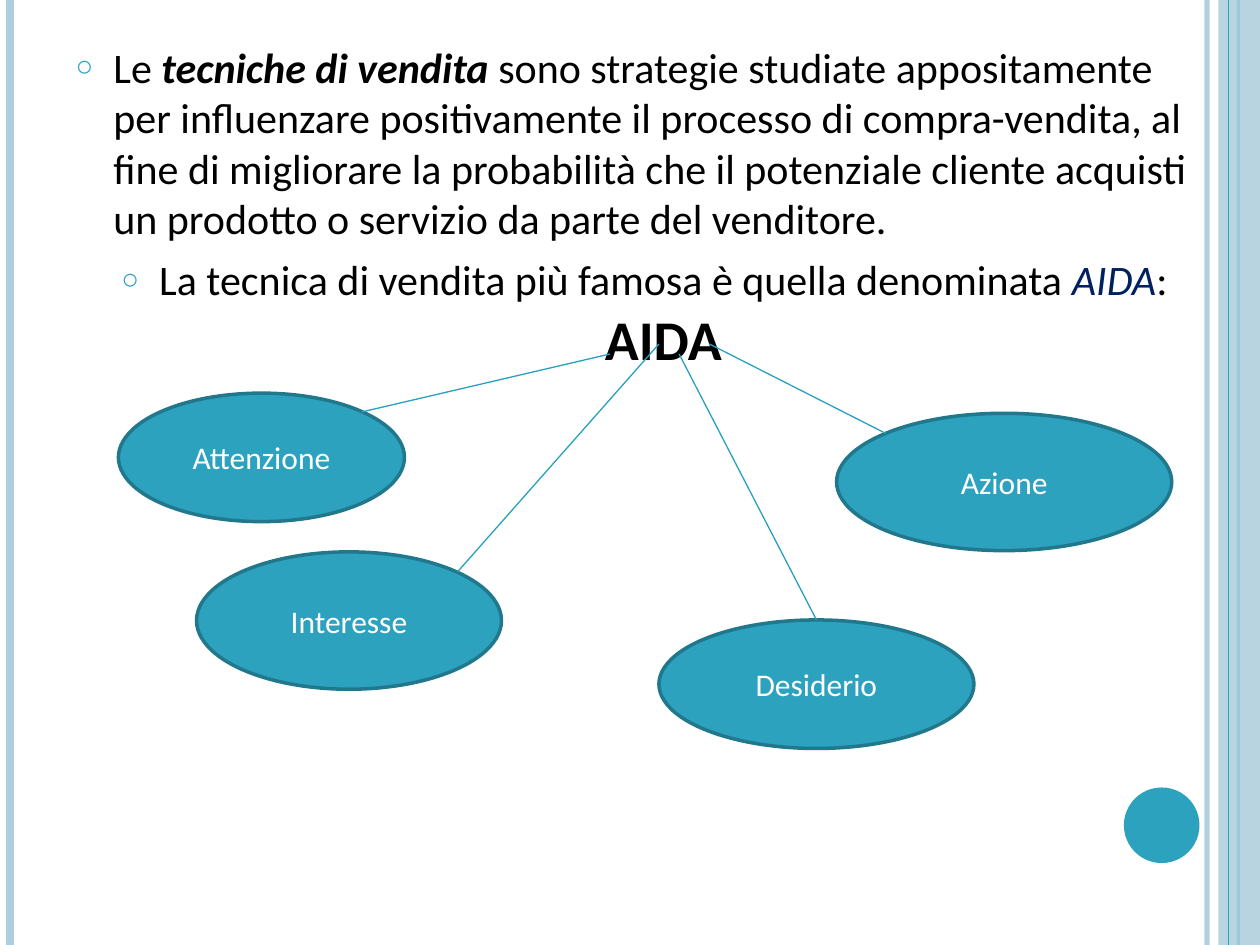
import pptx
import pptx.dml.color
import pptx.enum.shapes
import pptx.enum.text
import pptx.oxml
import pptx.oxml.ns
import pptx.util
from pptx.util import Inches

COLOURS = {
    "teal": "2DA2BF", "rim": "21788D", "spoke": "28A1BE", "pale": "ADCEDC",
    "black": "000000", "navy": "002060", "white": "FFFFFF",
}
PLAIN = {"size": 24, "bold": False, "italic": False, "colour": "black"}
PARAGRAPHS = [
    ("LEFT", [
        ("Le ", {}),
        ("tecniche di vendita", {"bold": True, "italic": True}),
        (" sono strategie studiate appositamente per influenzare positivamente "
         "il processo di compra-vendita, al fine di migliorare la probabilità che "
         "il potenziale cliente acquisti un prodotto o servizio da parte del venditore.", {}),
    ]),
    ("CENTER", [
        ("La tecnica di vendita più famosa è quella denominata ", {}),
        ("AIDA", {"italic": True, "colour": "navy"}),
        (": ", {}),
        ("AIDA", {"size": 32, "bold": True}),
    ]),
]
STAGES = [
    ("Attenzione", (0.94, 3.12, 2.27, 1.02), (2.87, 3.27, 4.84, 2.81)),
    ("Interesse", (1.56, 4.38, 2.42, 1.09), (3.63, 4.54, 5.23, 2.73)),
    ("Azione", (6.64, 3.28, 2.66, 1.09), (7.03, 3.44, 5.63, 2.73)),
    ("Desiderio", (5.23, 4.92, 2.5, 1.02), (6.48, 4.92, 5.39, 2.81)),
]
LEFT_RULES = [(9.58, "pale", 3, 93), (0.08, "pale", 4.5, 100), (9.83, "teal", 1.5, 100)]
BAND = (9.67, 0, 0.33, 7.5)
BAND_RULE = (9.75, "teal", 0.75, 100)
DISC = (8.92, 6.25, 0.6, 0.6)


def rgb(name):
    return pptx.dml.color.RGBColor.from_string(COLOURS[name])


def set_opacity(element, percent):
    if percent < 100:
        colour = next(element.iter(pptx.oxml.ns.qn("a:srgbClr")))
        alpha = colour.makeelement(pptx.oxml.ns.qn("a:alpha"), {"val": str(percent * 1000)})
        colour.append(alpha)


def format_run(run, text, look):
    run.text = text
    values = {**PLAIN, **look}
    font = {
        "name": "Calibri", "size": pptx.util.Pt(values["size"]),
        "bold": values["bold"], "italic": values["italic"],
    }
    for key, value in font.items():
        setattr(run.font, key, value)
    run.font.color.rgb = rgb(values["colour"])


def add_line(slide, ends, colour, width, opacity=100):
    line = slide.shapes.add_connector(
        pptx.enum.shapes.MSO_CONNECTOR.STRAIGHT, *map(Inches, ends))
    line.line.color.rgb = rgb(colour)
    line.line.width = pptx.util.Pt(width)
    properties = line._element.spPr
    set_opacity(properties, opacity)
    properties.append(properties.makeelement(pptx.oxml.ns.qn("a:effectLst"), {}))


def add_rule(slide, x, colour, width, opacity):
    add_line(slide, (x, 0, x, 7.5), colour, width, opacity)


def add_filled(slide, preset, box, colour, opacity=100):
    shape = slide.shapes.add_shape(
        getattr(pptx.enum.shapes.MSO_SHAPE, preset), *map(Inches, box))
    shape.shadow.inherit = False
    shape.fill.solid()
    shape.fill.fore_color.rgb = rgb(colour)
    set_opacity(shape._element.spPr, opacity)
    shape.line.fill.background()
    return shape


def add_frame(slide):
    for rule in LEFT_RULES:
        add_rule(slide, *rule)
    add_filled(slide, "RECTANGLE", BAND, "pale", 87)
    add_rule(slide, *BAND_RULE)
    add_filled(slide, "OVAL", DISC, "teal")


def add_bullet(paragraph):
    properties = paragraph._p.get_or_add_pPr()
    properties.set("marL", str(Inches(0.3)))
    properties.set("indent", str(Inches(-0.3)))
    namespace = pptx.oxml.ns.nsdecls("a")
    for xml in (
        f'<a:buClr {namespace}><a:srgbClr val="{COLOURS["teal"]}"/></a:buClr>',
        f'<a:buSzPct {namespace} val="70000"/>',
        f'<a:buChar {namespace} char="○"/>',
    ):
        properties.append(pptx.oxml.parse_xml(xml))


def fill_body(slide):
    title, body = slide.placeholders
    title._element.getparent().remove(title._element)
    slide.shapes._spTree.append(body._element)
    place = {"left": 0.5, "top": 0.28, "width": 9.23, "height": 6.8}
    for key, value in place.items():
        setattr(body, key, Inches(value))
    frame = body.text_frame
    frame.auto_size = pptx.enum.text.MSO_AUTO_SIZE.NONE
    for index, (alignment, runs) in enumerate(PARAGRAPHS):
        paragraph = frame.add_paragraph() if index else frame.paragraphs[0]
        paragraph.alignment = getattr(pptx.enum.text.PP_ALIGN, alignment)
        paragraph.space_before = pptx.util.Pt(6)
        add_bullet(paragraph)
        for text, look in runs:
            format_run(paragraph.add_run(), text, look)


def add_stages(slide):
    for label, box, spoke in STAGES:
        stage = add_filled(slide, "OVAL", box, "teal")
        stage.line.color.rgb = rgb("rim")
        stage.line.width = pptx.util.Pt(2)
        stage.text_frame.vertical_anchor = pptx.enum.text.MSO_ANCHOR.MIDDLE
        paragraph = stage.text_frame.paragraphs[0]
        paragraph.alignment = pptx.enum.text.PP_ALIGN.CENTER
        format_run(paragraph.add_run(), label, {"size": 18, "colour": "white"})
    for label, box, spoke in STAGES:
        add_line(slide, spoke, "spoke", 0.75)


def main():
    deck = pptx.Presentation()
    deck.slide_width, deck.slide_height = Inches(10), Inches(7.5)
    slide = deck.slides.add_slide(deck.slide_layouts[1])
    add_frame(slide)
    fill_body(slide)
    add_stages(slide)
    deck.save("out.pptx")


if __name__ == "__main__":
    main()
